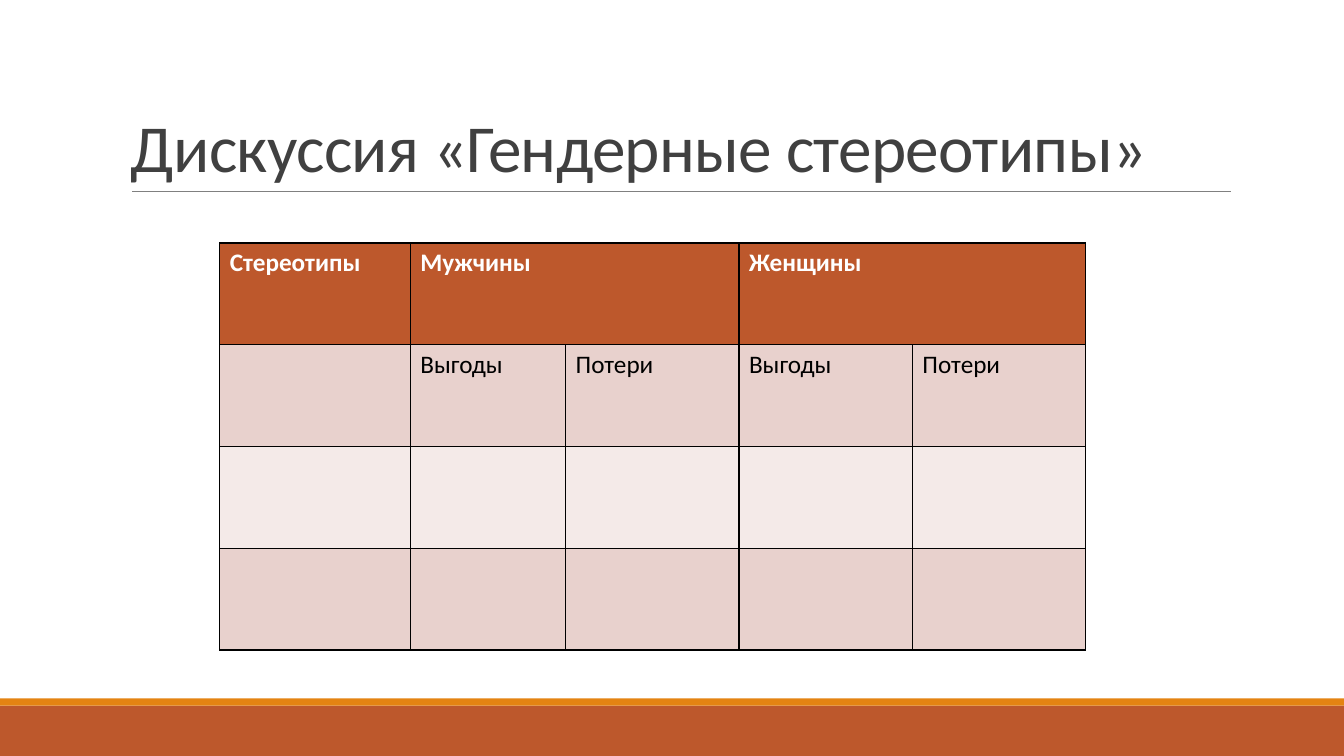
import pptx
import pptx.util
import pptx.dml.color
import pptx.enum.shapes
import pptx.enum.text
import pptx.oxml
from dataclasses import dataclass

TITLE = "Дискуссия «Гендерные стереотипы»"
ROWS = [
    ["Стереотипы", "Мужчины", "", "Женщины", ""],
    ["", "Выгоды", "Потери", "Выгоды", "Потери"],
    [""] * 5,
    [""] * 5,
]
HEADER_SPANS = [(1, 2), (3, 4)]
COL_WIDTHS = [1.89, 1.54, 1.72, 1.72, 1.72]
ROW_HEIGHT = 1.01
TABLE_LEFT, TABLE_TOP = 2.18, 2.41
WIDTH, HEIGHT = 13.33, 7.5
FOOTER_TOP, STRIPE_HEIGHT = 7, 0.07


@dataclass(frozen=True)
class Theme:
    font: str = "Calibri"
    title_size: int = 48
    cell_size: int = 18
    title: str = "404040"
    rule: str = "808080"
    accent: str = "BD582C"
    stripe: str = "E48312"
    bands: tuple = ("F4EAE8", "E8D1CD")
    header_text: str = "FFFFFF"
    text: str = "000000"
    border: str = "000000"


THEME = Theme()
inch = pptx.util.Inches


def rgb(value):
    return pptx.dml.color.RGBColor.from_string(value)


def style(p, size, color, bold=False):
    p.font.name = THEME.font
    p.font.size = pptx.util.Pt(size)
    p.font.color.rgb = rgb(color)
    p.font.bold = bold


def add_bar(s, top, height, color):
    sp = s.shapes.add_shape(pptx.enum.shapes.MSO_SHAPE.RECTANGLE,
                            0, inch(top), inch(WIDTH), inch(height))
    sp.shadow.inherit = False
    sp.fill.solid()
    sp.fill.fore_color.rgb = rgb(color)
    sp.line.fill.background()


def add_rule(s):
    line = s.shapes.add_connector(pptx.enum.shapes.MSO_CONNECTOR.STRAIGHT,
                                  inch(1.31), inch(1.9), inch(12.21), inch(1.9))
    line.line.color.rgb = rgb(THEME.rule)
    line.line.width = pptx.util.Pt(0.5)
    line._element.spPr.append(pptx.oxml.parse_xml(
        '<a:effectLst xmlns:a="http://schemas.openxmlformats.org/drawingml/2006/main"/>'))


def add_title(s):
    tf = s.shapes.add_textbox(inch(1.2), inch(0.31), inch(11), inch(1.59)).text_frame
    tf.word_wrap = True
    tf.vertical_anchor = pptx.enum.text.MSO_ANCHOR.BOTTOM
    p = tf.paragraphs[0]
    p.line_spacing = 0.85
    r = p.add_run()
    r.text = TITLE
    style(p, THEME.title_size, THEME.title)
    r.font._element.set("spc", "-50")


def add_borders(cell):
    tc_pr = cell._tc.get_or_add_tcPr()
    for i, side in enumerate(("lnL", "lnR", "lnT", "lnB")):
        tc_pr.insert(i, pptx.oxml.parse_xml(
            f'<a:{side} xmlns:a="http://schemas.openxmlformats.org/drawingml/2006/main"'
            f' w="12700"><a:solidFill><a:srgbClr val="{THEME.border}"/></a:solidFill>'
            f'</a:{side}>'))


def add_stereotype_table(s):
    table = s.shapes.add_table(len(ROWS), len(COL_WIDTHS), inch(TABLE_LEFT), inch(TABLE_TOP),
                               inch(sum(COL_WIDTHS)), inch(ROW_HEIGHT * len(ROWS))).table
    for column, width in zip(table.columns, COL_WIDTHS):
        column.width = inch(width)
    for i, texts in enumerate(ROWS):
        header = i == 0
        table.rows[i].height = inch(ROW_HEIGHT)
        for j, text in enumerate(texts):
            cell = table.cell(i, j)
            cell.text = text
            cell.fill.solid()
            cell.fill.fore_color.rgb = rgb(THEME.accent if header else THEME.bands[i % 2])
            style(cell.text_frame.paragraphs[0], THEME.cell_size,
                  THEME.header_text if header else THEME.text, header)
            add_borders(cell)
    for first, last in HEADER_SPANS:
        table.cell(0, first).merge(table.cell(0, last))


def main():
    prs = pptx.Presentation()
    prs.slide_width, prs.slide_height = inch(WIDTH), inch(HEIGHT)
    s = prs.slides.add_slide(prs.slide_layouts[6])
    add_bar(s, FOOTER_TOP, HEIGHT - FOOTER_TOP, THEME.accent)
    add_bar(s, FOOTER_TOP - STRIPE_HEIGHT, STRIPE_HEIGHT, THEME.stripe)
    add_rule(s)
    add_stereotype_table(s)
    add_title(s)
    prs.save("out.pptx")


if __name__ == "__main__":
    main()
